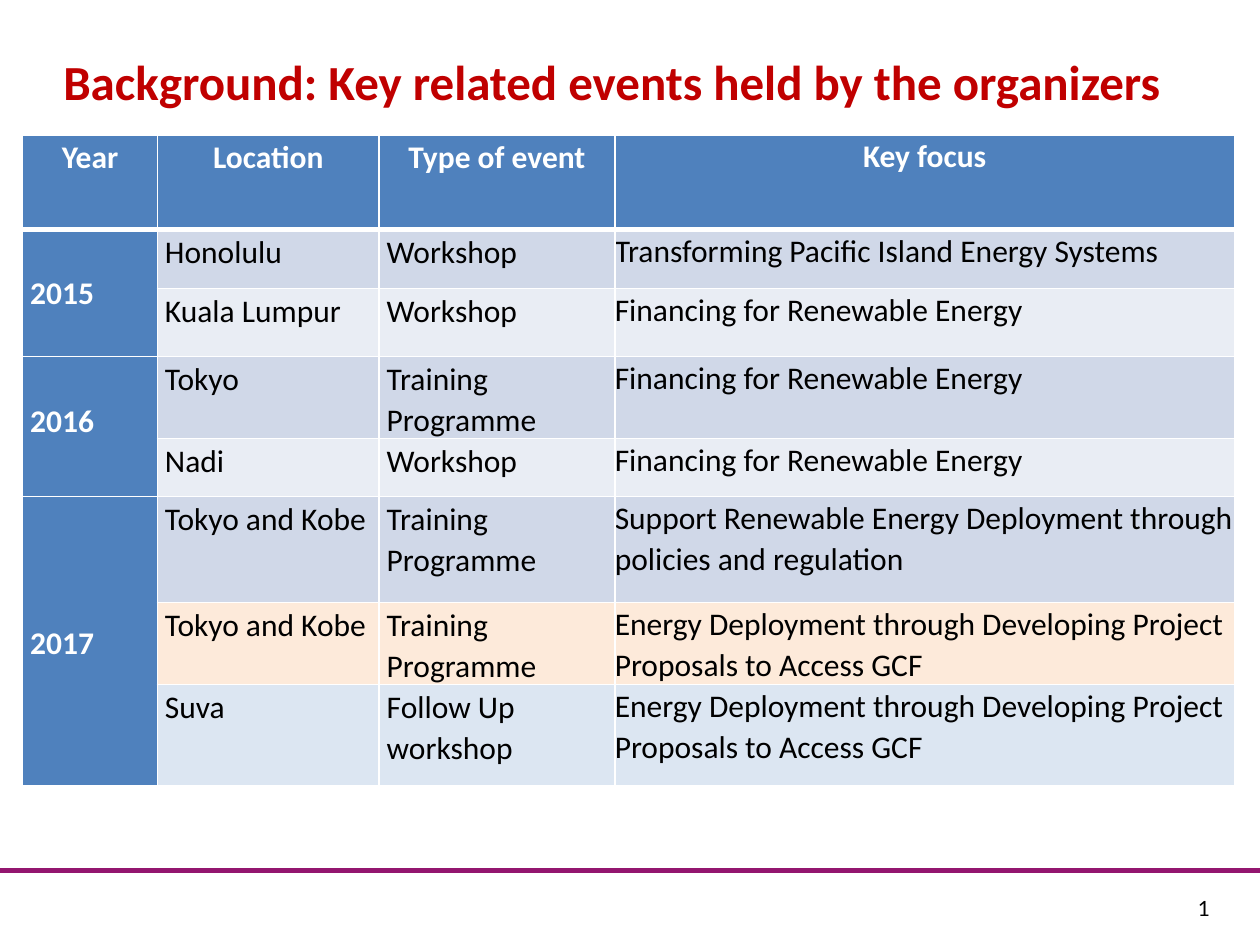
from pptx import Presentation
from pptx.dml.color import RGBColor
from pptx.enum.shapes import MSO_CONNECTOR
from pptx.enum.text import MSO_ANCHOR, PP_ALIGN
from pptx.oxml import parse_xml
from pptx.oxml.ns import nsdecls
from pptx.oxml.xmlchemy import OxmlElement
from pptx.util import Inches, Pt

RED = RGBColor(0xC0, 0x00, 0x00)
PURPLE = RGBColor(0x93, 0x16, 0x6F)
BLACK = RGBColor(0x00, 0x00, 0x00)
WHITE = RGBColor(0xFF, 0xFF, 0xFF)
BLUE = RGBColor(0x4F, 0x81, 0xBD)
DARK_BAND = RGBColor(0xD0, 0xD8, 0xE8)
LIGHT_BAND = RGBColor(0xE9, 0xED, 0xF4)
PEACH = RGBColor(0xFD, 0xEA, 0xDA)
PALE_BLUE = RGBColor(0xDC, 0xE6, 0xF2)

TITLE = "Background: Key related events held by the organizers"
HEADINGS = ["Year", "Location", "Type of event", "Key focus"]
FINANCING = "Financing for Renewable Energy"
PROPOSALS = "Energy Deployment through Developing Project Proposals to Access GCF"
EVENTS = [
    ("Honolulu", "Workshop", "Transforming Pacific Island Energy Systems", DARK_BAND),
    ("Kuala Lumpur", "Workshop", FINANCING, LIGHT_BAND),
    ("Tokyo", "Training Programme", FINANCING, DARK_BAND),
    ("Nadi", "Workshop", FINANCING, LIGHT_BAND),
    ("Tokyo and Kobe", "Training Programme",
     "Support Renewable Energy Deployment through policies and regulation", DARK_BAND),
    ("Tokyo and Kobe", "Training Programme", PROPOSALS, PEACH),
    ("Suva", "Follow Up workshop", PROPOSALS, PALE_BLUE),
]
YEARS = [("2015", 1, 2, 0.34), ("2016", 3, 2, 0.34), ("2017", 5, 3, 0.99)]
COLUMN_WIDTHS = [1.07, 1.76, 1.87, 4.92]
ROW_HEIGHTS = [0.75, 0.47, 0.54, 0.65, 0.46, 0.84, 0.65, 0.8]
FOCUS_COLUMN = 3


def write(frame, text, size=18, font="Calibri", color=BLACK, bold=False,
          align=PP_ALIGN.LEFT, spacing=None, after=None):
    paragraph = frame.paragraphs[0]
    paragraph.alignment = align
    paragraph.line_spacing = spacing
    if after is not None:
        paragraph.space_after = Pt(after)
    run = paragraph.add_run()
    run.text = text
    run.font.size = Pt(size)
    run.font.name = font
    run.font.bold = bold
    run.font.color.rgb = color
    return run


def draw_borders(cell, row):
    widths = {"L": 1, "R": 1, "T": 3 if row == 1 else 1, "B": 3 if row == 0 else 1}
    properties = cell._tc.get_or_add_tcPr()
    for side, width in widths.items():
        properties.append(parse_xml(
            f'<a:ln{side} {nsdecls("a")} w="{Pt(width)}"><a:solidFill>'
            f'<a:srgbClr val="{WHITE}"/></a:solidFill></a:ln{side}>'))


def fill_cell(table, row, column, text, fill, top=0.01, **style):
    cell = table.cell(row, column)
    in_focus = column == FOCUS_COLUMN
    cell.margin_left = cell.margin_right = Inches(0 if in_focus else 0.06)
    cell.margin_top = Inches(0 if in_focus else top)
    cell.margin_bottom = 0
    cell.vertical_anchor = MSO_ANCHOR.TOP
    draw_borders(cell, row)
    cell.fill.solid()
    cell.fill.fore_color.rgb = fill
    if text:
        write(cell.text_frame, text, spacing=1.07, after=8 if in_focus else None, **style)


def add_events_table(slide):
    table = slide.shapes.add_table(
        len(ROW_HEIGHTS), len(COLUMN_WIDTHS), Inches(0.18), Inches(1.07),
        Inches(sum(COLUMN_WIDTHS)), Inches(sum(ROW_HEIGHTS))).table
    for column, width in zip(table.columns, COLUMN_WIDTHS):
        column.width = Inches(width)
    for row, height in zip(table.rows, ROW_HEIGHTS):
        row.height = Inches(height)

    for column, heading in enumerate(HEADINGS):
        fill_cell(table, 0, column, heading, BLUE, color=WHITE, bold=True,
                  align=PP_ALIGN.CENTER)
    for row, (*details, band) in enumerate(EVENTS, start=1):
        for column, detail in enumerate(details, start=1):
            fill_cell(table, row, column, detail, band)
    for year, first, count, top in YEARS:
        for row in range(first, first + count):
            fill_cell(table, row, 0, year if row == first else "", BLUE, top,
                      color=WHITE, bold=True)
        table.cell(first, 0).merge(table.cell(first + count - 1, 0))


def add_footer(slide):
    rule = slide.shapes.add_connector(
        MSO_CONNECTOR.STRAIGHT, 0, Inches(6.91), Inches(10), Inches(6.91))
    rule.line.color.rgb = PURPLE
    rule.line.width = Pt(3)
    rule._element.spPr.append(OxmlElement("a:effectLst"))

    page_number = slide.shapes.add_textbox(
        Inches(9.41), Inches(7.06), Inches(0.47), Inches(0.3)).text_frame
    page_number.word_wrap = True
    run = write(page_number, "2", size=12, font="Lato")._r
    field = parse_xml(f'<a:fld {nsdecls("a")} type="slidenum" '
                      'id="{B6F15528-21DE-4FAA-801E-634DDDAF4B2B}"/>')
    run.addprevious(field)
    field.extend(list(run))
    run.getparent().remove(run)


def main():
    deck = Presentation()
    deck.slide_width, deck.slide_height = Inches(10), Inches(7.5)
    slide = deck.slides.add_slide(deck.slide_layouts[5])
    add_footer(slide)

    title = slide.shapes.title
    title.left, title.top = Inches(0), Inches(0.36)
    title.width, title.height = Inches(9.71), Inches(0.57)
    title.text_frame.vertical_anchor = MSO_ANCHOR.MIDDLE
    title.text_frame.word_wrap = True
    write(title.text_frame, TITLE, size=28, color=RED, bold=True, align=PP_ALIGN.CENTER)

    add_events_table(slide)
    deck.save("out.pptx")


if __name__ == "__main__":
    main()
